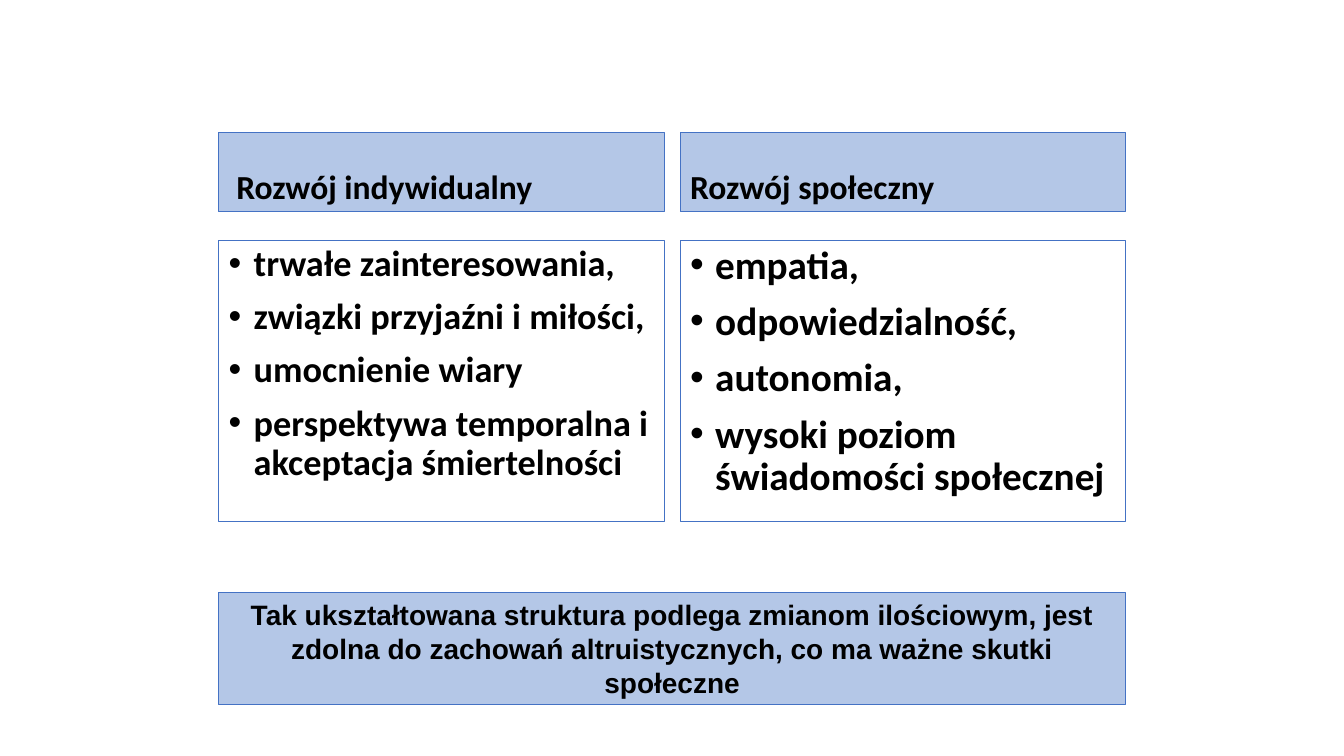
"""Build a slide comparing individual and social development."""
from dataclasses import dataclass
from typing import Any

import pptx
import pptx.dml.color
import pptx.enum.shapes
import pptx.enum.text
import pptx.oxml.ns
import pptx.util
from lxml import etree

Cm = pptx.util.Cm
Pt = pptx.util.Pt
RGB = pptx.dml.color.RGBColor
Align = pptx.enum.text.PP_ALIGN
Anchor = pptx.enum.text.MSO_ANCHOR


@dataclass(frozen=True)
class Theme:
    """Colours, fonts and type sizes of the slide."""
    band: RGB = RGB(0xB4, 0xC7, 0xE7)
    border: RGB = RGB(0x44, 0x72, 0xC4)
    ink: RGB = RGB(0, 0, 0)
    column_font: str = "Calibri"
    conclusion_font: str = "Arial"
    heading_size: float = 24
    conclusion_size: float = 20
    border_width: float = 0.75


@dataclass(frozen=True)
class Column:
    """One heading with its list of points."""
    heading: str
    points: tuple[str, ...]
    point_size: float


@dataclass(frozen=True)
class Style:
    """Look of the text and ground of one box."""
    font: str
    size: float
    filled: bool = True
    bulleted: bool = False
    anchor: Any = Anchor.TOP
    align: Any = Align.LEFT
    line_spacing: float = 0.9
    space_before: float = 10


THEME = Theme()
LEFT, WIDTH, GAP = 5.51, 22.86, 0.4
COLUMN_WIDTH = (WIDTH - GAP) / 2
HEADING_TOP, HEADING_HEIGHT = 3.33, 2.01
POINTS_TOP, POINTS_HEIGHT = 6.05, 7.09
CONCLUSION_TOP, CONCLUSION_HEIGHT = 14.94, 2.82
INDENT = 0.63

COLUMNS = (
    Column(" Rozwój indywidualny",
           ("trwałe zainteresowania,", "związki przyjaźni i miłości,", "umocnienie wiary",
            "perspektywa temporalna i akceptacja śmiertelności"), 25.9),
    Column("Rozwój społeczny",
           ("empatia,", "odpowiedzialność,", "autonomia,",
            "wysoki poziom świadomości społecznej"), 28),
)
CONCLUSION = ("Tak ukształtowana struktura podlega zmianom ilościowym, jest zdolna do zachowań "
              "altruistycznych, co ma ważne skutki społeczne")


def apply(target: Any, values: dict[str, Any]) -> None:
    """Set each named attribute on the target."""
    for name, value in values.items():
        setattr(target, name, value)


def set_bullet(para: Any, bulleted: bool) -> None:
    """Give the paragraph a hanging bullet or none at all."""
    properties = para._p.get_or_add_pPr()
    indent = Cm(INDENT) if bulleted else 0
    properties.set("marL", str(indent))
    properties.set("indent", str(-indent))
    if bulleted:
        etree.SubElement(properties, pptx.oxml.ns.qn("a:buFont")).set("typeface", "Arial")
        etree.SubElement(properties, pptx.oxml.ns.qn("a:buChar")).set("char", "•")
    else:
        etree.SubElement(properties, pptx.oxml.ns.qn("a:buNone"))


def place(box: Any, left: float, top: float, width: float, height: float) -> None:
    """Move and size a box, in centimetres."""
    apply(box, {"left": Cm(left), "top": Cm(top), "width": Cm(width), "height": Cm(height)})


def dress(box: Any, lines: tuple[str, ...], style: Style) -> None:
    """Write the lines into the box and format both."""
    if style.filled:
        box.fill.solid()
        box.fill.fore_color.rgb = THEME.band
    else:
        box.fill.background()
    box.line.color.rgb = THEME.border
    box.line.width = Pt(THEME.border_width)
    frame = box.text_frame
    frame.text = "\n".join(lines)
    apply(frame, {"word_wrap": True, "vertical_anchor": style.anchor,
                  "auto_size": pptx.enum.text.MSO_AUTO_SIZE.NONE})
    for para in frame.paragraphs:
        apply(para, {"alignment": style.align, "line_spacing": style.line_spacing,
                     "space_before": Pt(style.space_before)})
        set_bullet(para, style.bulleted)
        for span in para.runs:
            apply(span.font, {"name": style.font, "size": Pt(style.size), "bold": True})
            span.font.color.rgb = THEME.ink


def add_column(page: Any, index: int, column: Column) -> None:
    """Fill the heading and list placeholders of one column."""
    left = LEFT + index * (COLUMN_WIDTH + GAP)
    bodies = {holder.placeholder_format.idx: holder for holder in page.placeholders}
    heading, points = bodies[2 * index + 1], bodies[2 * index + 2]
    place(heading, left, HEADING_TOP, COLUMN_WIDTH, HEADING_HEIGHT)
    dress(heading, (column.heading,),
          Style(THEME.column_font, THEME.heading_size, anchor=Anchor.BOTTOM))
    place(points, left, POINTS_TOP, COLUMN_WIDTH, POINTS_HEIGHT)
    dress(points, column.points,
          Style(THEME.column_font, column.point_size, filled=False, bulleted=True))


def add_conclusion(page: Any) -> None:
    """Add the closing band below both columns."""
    box = page.shapes.add_shape(pptx.enum.shapes.MSO_SHAPE.RECTANGLE, Cm(LEFT),
                                Cm(CONCLUSION_TOP), Cm(WIDTH), Cm(CONCLUSION_HEIGHT))
    box.shadow.inherit = False
    dress(box, (CONCLUSION,), Style(THEME.conclusion_font, THEME.conclusion_size,
                                    align=Align.CENTER, line_spacing=1.0, space_before=0))


def main() -> None:
    """Build and save the deck."""
    deck = pptx.Presentation()
    apply(deck, {"slide_width": Cm(33.87), "slide_height": Cm(19.05)})
    page = deck.slides.add_slide(deck.slide_layouts.get_by_name("Comparison"))
    title = page.shapes.title.element
    title.getparent().remove(title)
    for index, column in enumerate(COLUMNS):
        add_column(page, index, column)
    add_conclusion(page)
    deck.save("out.pptx")


if __name__ == "__main__":
    main()
